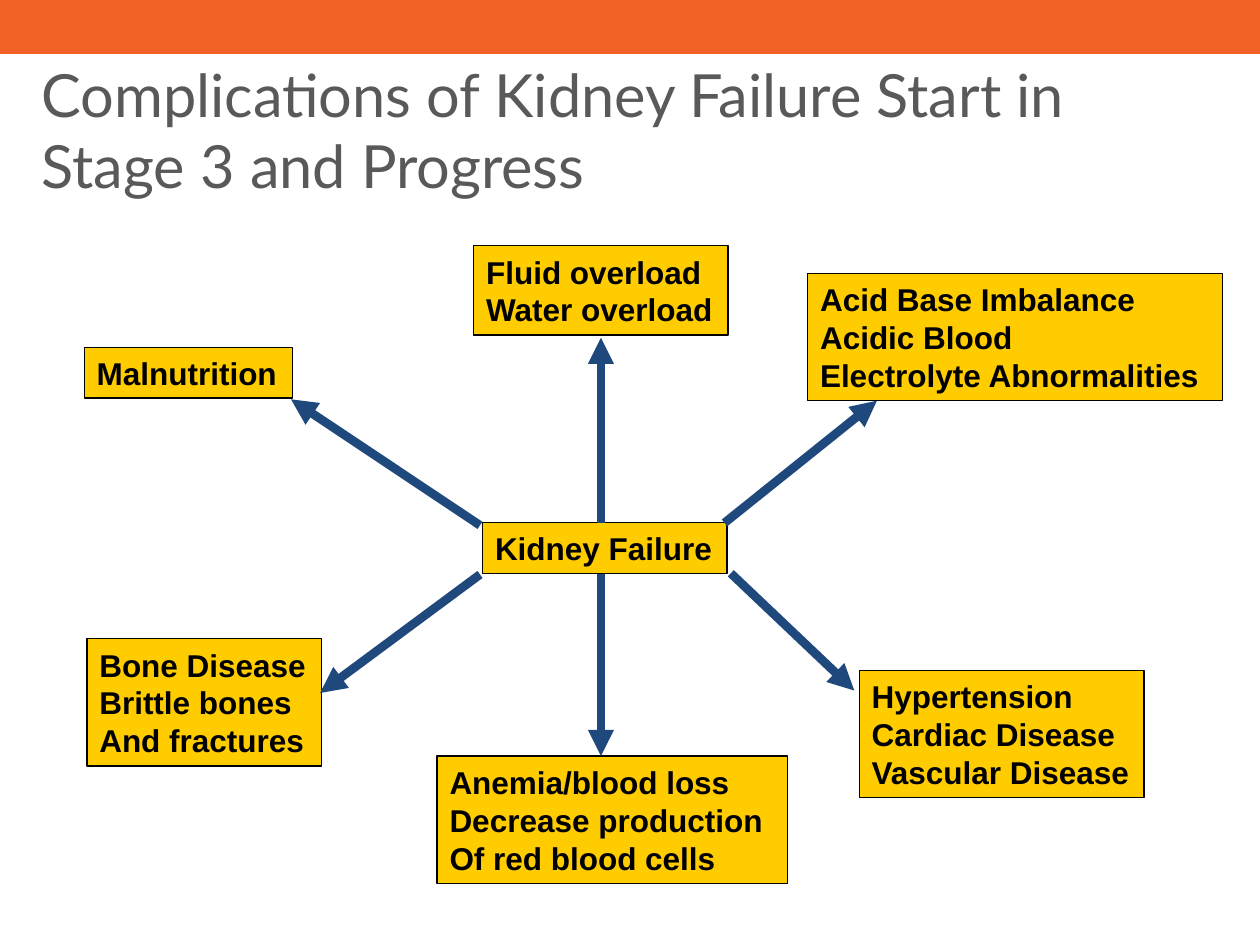
from typing import NamedTuple

from lxml import etree
from pptx import Presentation
from pptx.dml.color import RGBColor
from pptx.enum import shapes, text
from pptx.oxml.ns import qn
from pptx.util import Pt

ORANGE, YELLOW, NAVY, BLACK, GRAY = "F16025", "FFCC00", "1F497D", "000000", "595959"


class Box(NamedTuple):
    left: float
    top: float
    width: float
    height: float
    lines: tuple[str, ...]


class Arrow(NamedTuple):
    start: tuple[float, float]
    end: tuple[float, float]
    color: str = NAVY
    weight: float = 5


BOXES = [
    Box(275.8, 298.8, 139.7, 28.8, ("Kidney Failure",)),
    Box(48.2, 198.7, 118.8, 28.8, ("Malnutrition",)),
    Box(49.7, 365, 133.9, 72.7, ("Bone Disease", "Brittle bones", "And fractures")),
    Box(249.8, 432, 200.2, 72.7,
        ("Anemia/blood loss", "Decrease production", "Of red blood cells")),
    Box(270.7, 140.4, 145.4, 51.1, ("Fluid overload", "Water overload")),
    Box(461.5, 156.2, 236.9, 72.7,
        ("Acid Base Imbalance", "Acidic Blood", "Electrolyte Abnormalities")),
    Box(491, 383, 162.7, 72.7, ("Hypertension", "Cardiac Disease", "Vascular Disease")),
]

ARROWS = [
    Arrow((343.4, 298.8), (343.4, 193)),
    Arrow((274.3, 300.2), (166.3, 228.2)),
    Arrow((274.3, 328.3), (182.9, 396)),
    Arrow((343.4, 328.3), (343.4, 432)),
    Arrow((409, 311), (409, 311), BLACK, 0.75),
    Arrow((414, 298.8), (501.1, 229)),
    Arrow((417.6, 327.6), (488.2, 394.6)),
]


def rgb(color: str) -> RGBColor:
    return RGBColor.from_string(color)


def write_lines(frame, lines, *, font: str, size: float, color: str, bold: bool = False) -> None:
    for index, line in enumerate(lines):
        paragraph = frame.add_paragraph() if index else frame.paragraphs[0]
        paragraph.alignment = text.PP_ALIGN.LEFT
        run = paragraph.add_run()
        run.text = line
        run.font.name, run.font.size, run.font.bold = font, Pt(size), bold
        run.font.color.rgb = rgb(color)


def add_rectangle(slide, left, top, width, height, fill: str, line: str, weight: float):
    shape = slide.shapes.add_shape(
        shapes.MSO_SHAPE.RECTANGLE, Pt(left), Pt(top), Pt(width), Pt(height))
    shape.shadow.inherit = False
    shape.fill.solid()
    shape.fill.fore_color.rgb = rgb(fill)
    shape.line.color.rgb = rgb(line)
    shape.line.width = Pt(weight)
    return shape


def add_title(slide, title: str) -> None:
    shape = slide.shapes.title
    shape.left, shape.top, shape.width, shape.height = Pt(23.8), Pt(33.1), Pt(653.8), Pt(74.9)
    frame = shape.text_frame
    frame.margin_left = frame.margin_right = frame.margin_top = frame.margin_bottom = 0
    frame.vertical_anchor = text.MSO_ANCHOR.TOP
    frame.auto_size = text.MSO_AUTO_SIZE.NONE
    frame.word_wrap = True
    write_lines(frame, [title], font="Lato", size=34, color=GRAY)


def add_box(slide, box: Box) -> None:
    shape = add_rectangle(slide, *box[:4], fill=YELLOW, line=BLACK, weight=0.75)
    frame = shape.text_frame
    frame.word_wrap = False
    frame.vertical_anchor = text.MSO_ANCHOR.MIDDLE
    write_lines(frame, box.lines, font="Arial", size=18, color=BLACK, bold=True)


def add_arrow(slide, arrow: Arrow) -> None:
    points = [Pt(value) for value in (*arrow.start, *arrow.end)]
    connector = slide.shapes.add_connector(shapes.MSO_CONNECTOR.STRAIGHT, *points)
    connector.line.color.rgb = rgb(arrow.color)
    connector.line.width = Pt(arrow.weight)
    line = connector.line._get_or_add_ln()
    etree.SubElement(line, qn("a:tailEnd"), type="triangle")
    etree.SubElement(connector._element.spPr, qn("a:effectLst"))


def main() -> None:
    presentation = Presentation()
    presentation.slide_width, presentation.slide_height = Pt(720), Pt(540)
    slide = presentation.slides.add_slide(presentation.slide_layouts[5])
    add_rectangle(slide, 0, 0, 720, 30, fill=ORANGE, line=ORANGE, weight=2)
    add_title(slide, "Complications of Kidney Failure Start in Stage 3 and Progress")
    for box in BOXES:
        add_box(slide, box)
    for arrow in ARROWS:
        add_arrow(slide, arrow)
    presentation.save("out.pptx")


if __name__ == "__main__":
    main()
